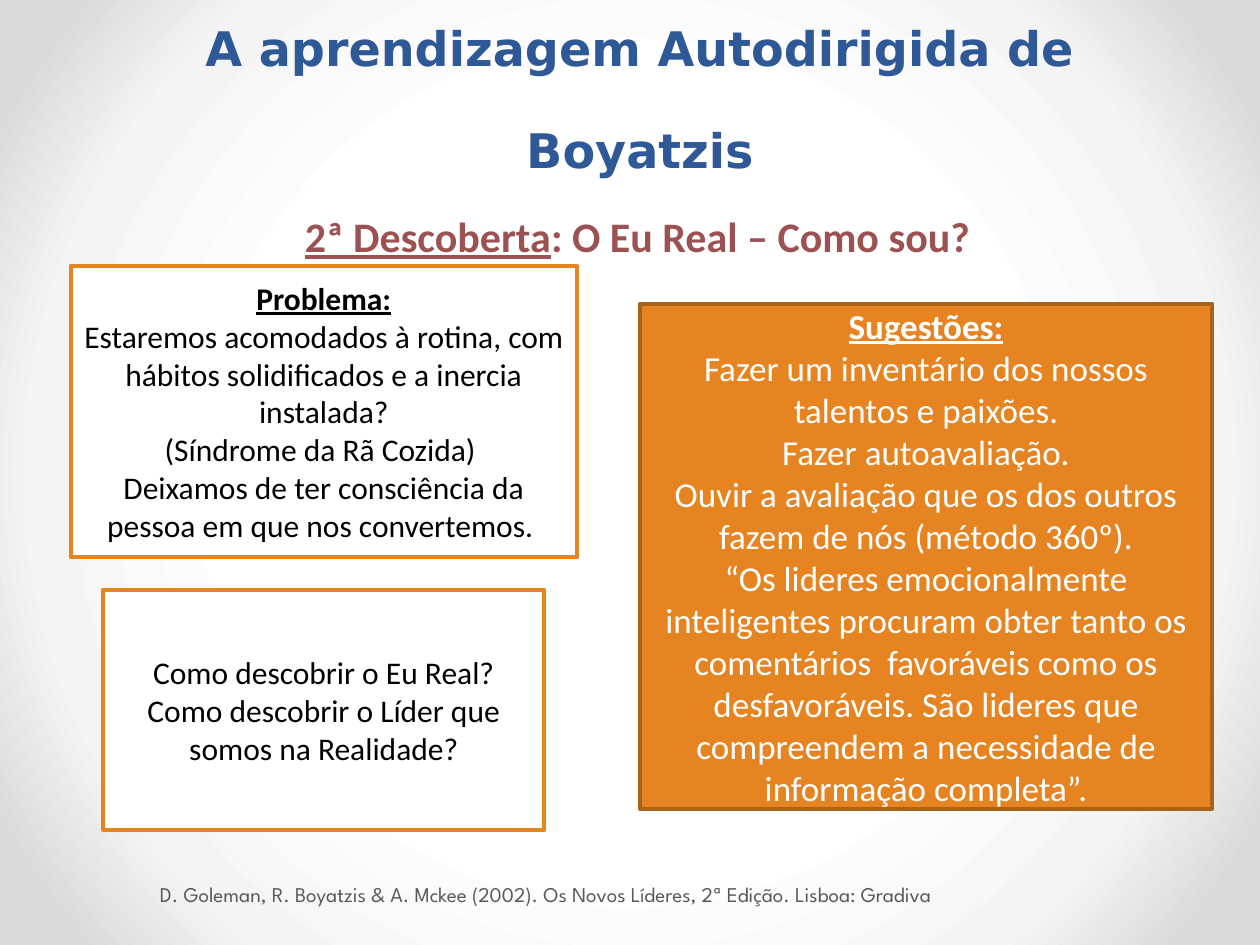
from lxml import etree
from pptx import Presentation
from pptx import util as u
from pptx.dml.color import RGBColor
from pptx.enum import shapes, text
from pptx.oxml.ns import qn

THEME = {
    "white": "FFFFFF", "black": "000000", "orange": "E68422", "brown": "AA6219",
    "blue": "2F5897", "wine": "9C5252", "grey": "595959",
    "body": "Calibri", "heading": "DejaVu Sans", "source": "League Spartan",
    "title_size": 27.2, "subtitle_size": 24, "suggestion_size": 20,
    "card_size": 18, "source_size": 12, "heading_pitch": 58, "border": 2.25,
    "backdrop": [(50, "FFFFFF"), (76, "F4F4F4"), (92, "DADADA")],
}

TITLE = [[("A aprendizagem Autodirigida de Boyatzis", "b")]]
SUBTITLE = [[("2ª Descoberta", "bu"), (": O Eu Real – Como sou?", "b")]]
SOURCE = [[("D. Goleman, R. Boyatzis & A. Mckee (2002). Os Novos Líderes, "
            "2ª Edição. Lisboa: Gradiva", "")]]
QUESTIONS = [
    [("Como descobrir o Eu Real?", "")],
    [("Como descobrir o Líder que somos na Realidade?", "")],
]
PROBLEM = [
    [("Problema:", "bu")],
    [("Estaremos acomodados à rotina, com hábitos solidificados e a inercia instalada?", "")],
    [("(Síndrome da Rã Cozida) ", "")],
    [("Deixamos de ter consciência da pessoa em que nos convertemos. ", "")],
]
SUGGESTIONS = [
    [("Sugestões:", "bu")],
    [("Fazer um inventário dos nossos talentos e paixões.", "")],
    [("Fazer autoavaliação.", "")],
    [("Ouvir a avaliação que os dos outros fazem de nós (método 360º).", "")],
    [("“Os lideres emocionalmente inteligentes procuram obter tanto os comentários  "
      "favoráveis como os desfavoráveis. São lideres que compreendem a necessidade "
      "de informação completa”.", "")],
]

CARDS = [
    (QUESTIONS, (0.82, 4.68, 3.5, 1.91), "white", "orange", "black", "card_size"),
    (PROBLEM, (0.56, 2.11, 4.02, 2.31), "white", "orange", "black", "card_size"),
    (SUGGESTIONS, (5.08, 2.41, 4.54, 4.01), "orange", "brown", "white", "suggestion_size"),
]


def color(name):
    return RGBColor.from_string(THEME[name])


def write(shape, paragraphs, *, size, ink, font="body", anchor="MIDDLE",
          align="CENTER", pitch=None, insets=(0.1, 0.05, 0.1, 0.05)):
    frame = shape.text_frame
    frame.word_wrap = True
    frame.vertical_anchor = getattr(text.MSO_ANCHOR, anchor)
    (frame.margin_left, frame.margin_top,
     frame.margin_right, frame.margin_bottom) = map(u.Inches, insets)
    for index, pieces in enumerate(paragraphs):
        paragraph = frame.add_paragraph() if index else frame.paragraphs[0]
        paragraph.alignment = getattr(text.PP_ALIGN, align)
        if pitch:
            paragraph.line_spacing = u.Pt(pitch)
        for words, style in pieces:
            run = paragraph.add_run()
            run.text = words
            run.font.name = THEME[font]
            run.font.size = u.Pt(THEME[size])
            run.font.color.rgb = color(ink)
            run.font.bold = "b" in style
            run.font.underline = "u" in style


def paint_backdrop(slide):
    slide.background.fill.gradient()
    gradient = slide.element.find(".//" + qn("a:gradFill"))
    for child in list(gradient):
        gradient.remove(child)
    stops = etree.SubElement(gradient, qn("a:gsLst"))
    for position, tone in THEME["backdrop"]:
        stop = etree.SubElement(stops, qn("a:gs"), pos=str(position * 1000))
        etree.SubElement(stop, qn("a:srgbClr"), val=tone)
    circle = etree.SubElement(gradient, qn("a:path"), path="circle")
    etree.SubElement(circle, qn("a:fillToRect"), **dict.fromkeys("ltrb", "50000"))


def add_card(slide, paragraphs, place, fill, border, ink, size):
    card = slide.shapes.add_shape(shapes.MSO_SHAPE.RECTANGLE, *map(u.Inches, place))
    card.shadow.inherit = False
    card.fill.solid()
    card.fill.fore_color.rgb = color(fill)
    card.line.color.rgb = color(border)
    card.line.width = u.Pt(THEME["border"])
    write(card, paragraphs, size=size, ink=ink)


def add_label(slide, paragraphs, place, **look):
    write(slide.shapes.add_textbox(*map(u.Inches, place)), paragraphs, **look)


def main():
    deck = Presentation()
    deck.slide_width, deck.slide_height = u.Inches(10), u.Inches(7.5)
    slide = deck.slides.add_slide(deck.slide_layouts[6])
    paint_backdrop(slide)
    for card in CARDS:
        add_card(slide, *card)
    add_label(slide, SOURCE, (1.22, 6.9, 8.14, 0.4), size="source_size", ink="grey",
              font="source", align="LEFT", insets=(0.05, 0.05, 0.1, 0.05))
    add_label(slide, SUBTITLE, (0.56, 1.43, 9, 0.69), size="subtitle_size", ink="wine",
              anchor="BOTTOM", pitch=THEME["heading_pitch"])
    add_label(slide, TITLE, (0.58, 0.21, 9, 1.25), size="title_size", ink="blue",
              font="heading", anchor="BOTTOM", pitch=THEME["heading_pitch"])
    deck.save("out.pptx")


if __name__ == "__main__":
    main()
